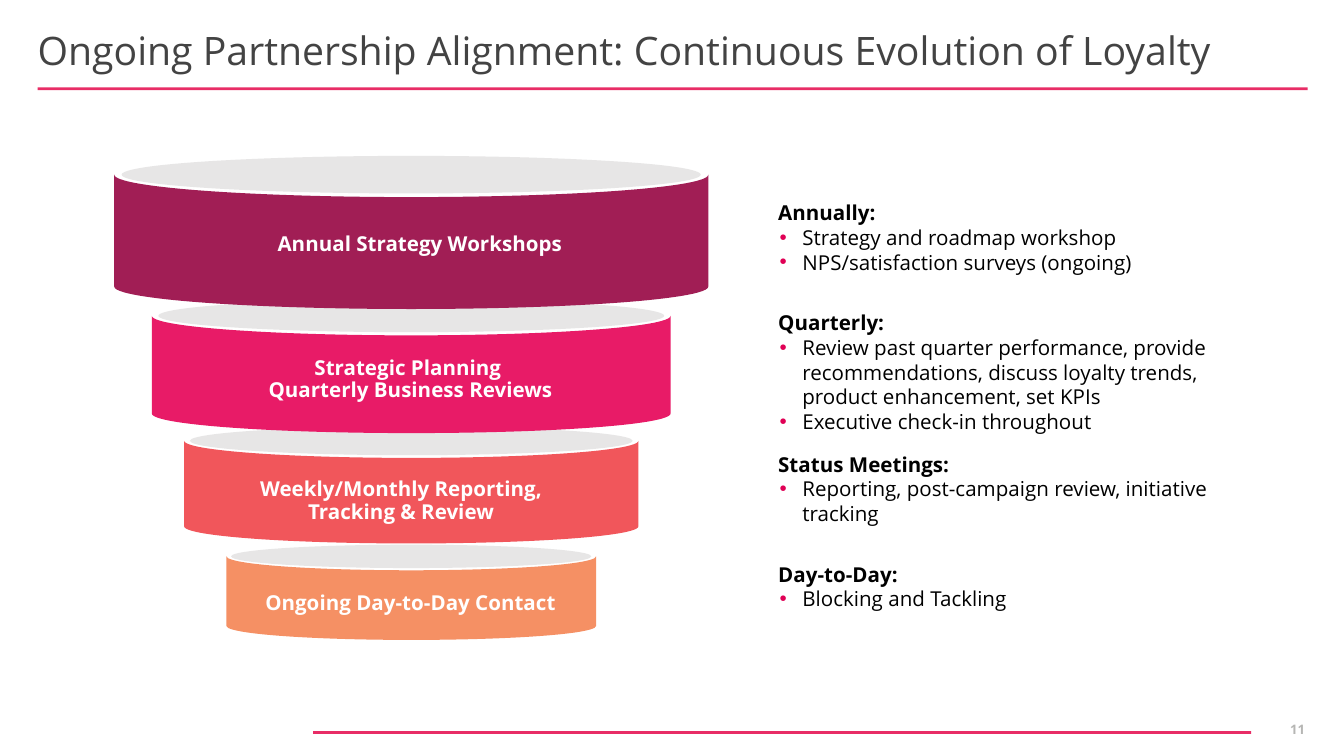
from pptx import Presentation, util as u
from pptx.dml.color import RGBColor
from pptx.enum import shapes, text
from pptx.oxml.ns import qn
from lxml import etree

FONT = "Open Sans"
SLIDE_WIDTH = 10
SLIDE_HEIGHT = SLIDE_WIDTH * 9 / 16
FUNNEL_CENTER = 3.06

# Band width, top, fill, label, label box (left, top, width, height); bottom first
BANDS = [
    (2.75, 4.14, "F59064", "Ongoing Day-to-Day Contact", (1.86, 4.35, 2.39, 0.28)),
    (3.38, 3.28, "F1565B", "Weekly/Monthly Reporting, Tracking & Review",
     (1.68, 3.42, 2.61, 0.62)),
    (3.86, 2.35, "E81B67", "Strategic Planning \vQuarterly Business Reviews",
     (1.68, 2.45, 2.75, 0.75)),
    (4.42, 1.3, "A11E55", "Annual Strategy Workshops", (1.41, 1.45, 3.43, 0.75)),
]

# Top, height, heading, bullets
CADENCES = [
    (1.44, 0.63, "Annually:",
     ["Strategy and roadmap workshop", "NPS/satisfaction surveys (ongoing)"]),
    (2.26, 0.63, "Quarterly:",
     ["Review past quarter performance, provide recommendations, "
      "discuss loyalty trends, product enhancement, set KPIs",
      "Executive check-in throughout"]),
    (3.31, 0.63, "Status Meetings:",
     ["Reporting, post-campaign review, initiative tracking"]),
    (4.13, 0.47, "Day-to-Day:", ["Blocking and Tackling"]),
]


def color(value):
    return RGBColor.from_string(value)


def place(shape, left, top, width, height):
    shape.left, shape.top = u.Inches(left), u.Inches(top)
    shape.width, shape.height = u.Inches(width), u.Inches(height)


def set_frame(shape, insets, anchor):
    frame = shape.text_frame
    frame.word_wrap = True
    frame.auto_size = text.MSO_AUTO_SIZE.NONE
    frame.vertical_anchor = anchor
    frame.margin_left, frame.margin_top, frame.margin_right, frame.margin_bottom = (
        u.Inches(inset) for inset in insets)
    return frame


def set_bullet(paragraph, bullet_color):
    properties = paragraph._p.get_or_add_pPr()
    properties.set("marL", str(u.Inches(0.18)))
    properties.set("indent", str(u.Inches(-0.17)))
    bullet = etree.SubElement(properties, qn("a:buClr"))
    etree.SubElement(bullet, qn("a:srgbClr"), val=bullet_color)
    etree.SubElement(properties, qn("a:buFont"), typeface="Arial")
    etree.SubElement(properties, qn("a:buChar"), char="•")


def clear_bullet(paragraph):
    properties = paragraph._p.get_or_add_pPr()
    properties.set("marL", "0")
    properties.set("indent", "0")
    etree.SubElement(properties, qn("a:buNone"))


def write(paragraph, words, size=11, fill="000000", bold=False,
          align=text.PP_ALIGN.LEFT, spacing=1.0):
    paragraph.text = words
    paragraph.alignment = align
    paragraph.line_spacing = spacing
    paragraph.space_before = paragraph.space_after = u.Pt(0)
    font = paragraph.font
    font.name, font.size, font.bold = FONT, u.Pt(size), bold
    font.color.rgb = color(fill)


def add_block(slide, preset, fill, left, top, width, height):
    shape = slide.shapes.add_shape(preset, 0, 0, 0, 0)
    place(shape, left, top, width, height)
    shape.shadow.inherit = False
    shape.fill.solid()
    shape.fill.fore_color.rgb = color(fill)
    shape.line.fill.background()
    return shape


def add_label(slide, words, box, insets, **style):
    shape = slide.shapes.add_textbox(0, 0, 0, 0)
    place(shape, *box)
    frame = set_frame(shape, insets, text.MSO_ANCHOR.MIDDLE)
    write(frame.paragraphs[0], words, bold=True, **style)


def add_band(slide, width, top, fill, label, box):
    height = 0.226 * width
    # The storage shape is turned on its side, so its frame is upright
    band = add_block(slide, shapes.MSO_SHAPE.FLOWCHART_STORED_DATA, fill,
                     FUNNEL_CENTER - height / 2, top + height / 2 - width / 2,
                     height, width)
    band.rotation = 270
    lid_width, lid_height = 0.975 * width, 0.28 * height
    add_block(slide, shapes.MSO_SHAPE.OVAL, "E7E6E6",
              FUNNEL_CENTER - lid_width / 2, top - lid_height / 2,
              lid_width, lid_height)
    add_label(slide, label, box, [0.02] * 4, fill="FFFFFF",
              align=text.PP_ALIGN.CENTER, spacing=0.9)


def fill_cadence(placeholder, top, height, heading, items):
    place(placeholder, 5.69, top, 3.51, height)
    frame = set_frame(placeholder, (0.1, 0.05, 0.1, 0.05), text.MSO_ANCHOR.TOP)
    clear_bullet(frame.paragraphs[0])
    write(frame.paragraphs[0], heading, bold=True)
    for item in items:
        paragraph = frame.add_paragraph()
        set_bullet(paragraph, "E00055")
        write(paragraph, item)


def main():
    presentation = Presentation()
    presentation.slide_width = u.Inches(SLIDE_WIDTH)
    presentation.slide_height = u.Inches(SLIDE_HEIGHT)
    # The comparison layout has a title and four body placeholders
    slide = presentation.slides.add_slide(presentation.slide_layouts[4])

    # Title
    title = slide.shapes.title
    place(title, 0.28, 0.13, 9.46, 0.53)
    frame = set_frame(title, (0, 0.04, 0.07, 0.04), text.MSO_ANCHOR.MIDDLE)
    write(frame.paragraphs[0],
          "Ongoing Partnership Alignment: Continuous Evolution of Loyalty",
          size=21, fill="434343", spacing=0.9)

    # Rules and page number
    for left, top, width in [(0.28, 0.65, 9.45), (2.33, 5.44, 6.98)]:
        add_block(slide, shapes.MSO_SHAPE.RECTANGLE, "E82D66", left, top, width, 0.02)
    add_label(slide, "11", (9.31, 5.28, 0.47, 0.29), (0.07, 0.04, 0.07, 0.04),
              size=7, fill="B6B6B4", align=text.PP_ALIGN.RIGHT)

    # Funnel
    for band in BANDS:
        add_band(slide, *band)

    # Meeting cadence lists
    bodies = [slide.placeholders[index] for index in range(1, 5)]
    for body, cadence in zip(bodies, CADENCES):
        fill_cadence(body, *cadence)

    presentation.save("out.pptx")


if __name__ == "__main__":
    main()
